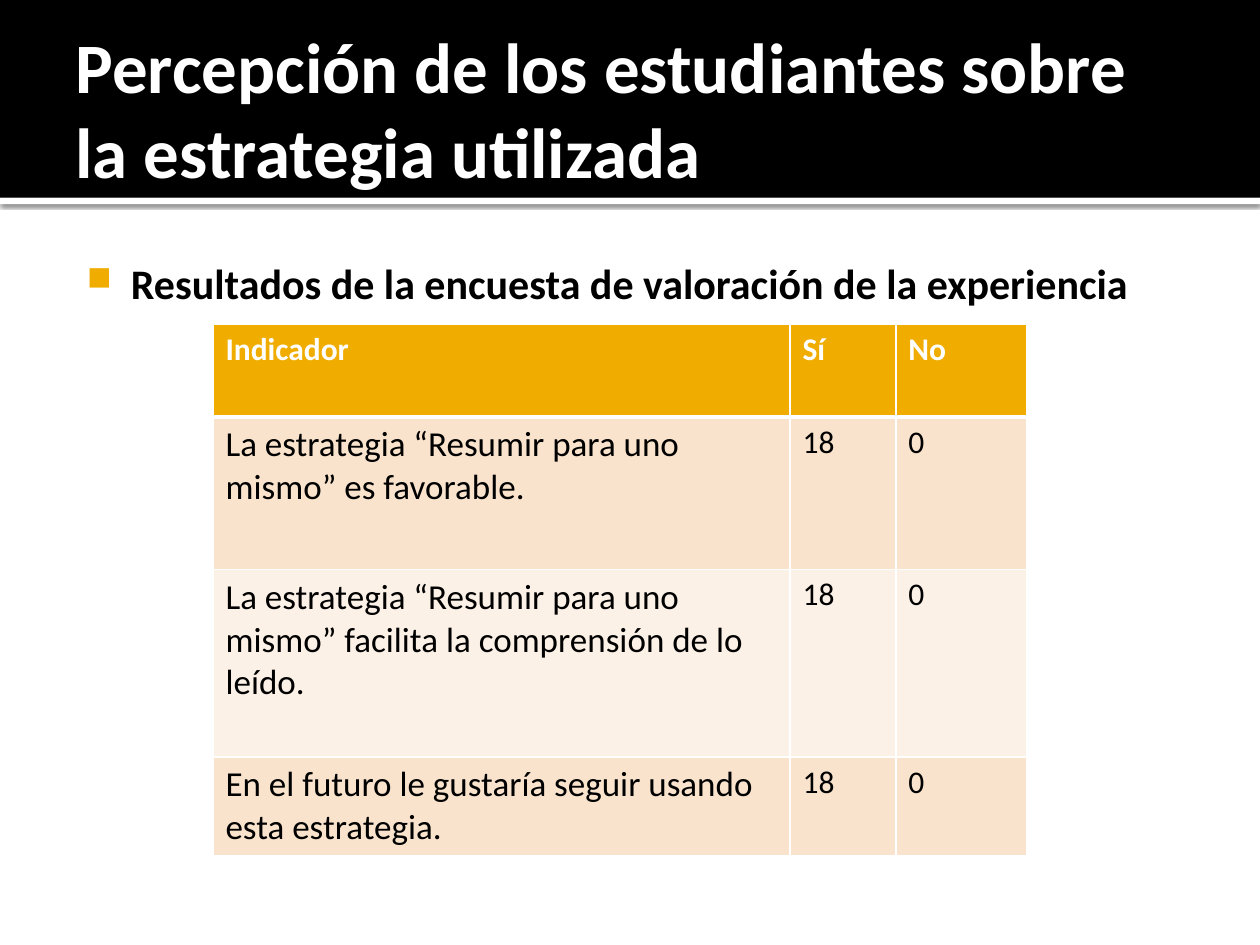
from lxml import etree
from pptx import Presentation, util as u
from pptx.dml.color import RGBColor
from pptx.enum import shapes, text
from pptx.oxml import parse_xml
from pptx.oxml.ns import nsdecls, qn

# Content
TITLE = "Percepción de los estudiantes sobre la estrategia utilizada"
LEAD = "Resultados de la encuesta de valoración de la experiencia"
ROWS = [
    ("Indicador", "Sí", "No"),
    ("La estrategia “Resumir para uno mismo” es favorable.", "18", "0"),
    ("La estrategia “Resumir para uno mismo” facilita la comprensión de lo leído.", "18", "0"),
    ("En el futuro le gustaría seguir usando esta estrategia.", "18", "0"),
]
WIDTHS = (4.58, 0.84, 1.04)
HEIGHTS = (0.74, 1.21, 1.49, 0.77)

FONT = "Calibri"
WHITE = RGBColor(0xFF, 0xFF, 0xFF)
BLACK = RGBColor(0, 0, 0)
GOLD = RGBColor(0xF0, 0xAD, 0x00)
PEACH = RGBColor(0xF9, 0xE3, 0xCC)
CREAM = RGBColor(0xFC, 0xF1, 0xE7)


def add_run(para, words, size, color, bold):
    para.alignment = text.PP_ALIGN.LEFT
    run = para.add_run()
    run.text = words
    font = run.font
    font.name, font.size, font.bold = FONT, u.Pt(size), bold
    font.color.rgb = color


def set_frame(frame, anchor, *insets):
    frame.word_wrap = True
    frame.auto_size = text.MSO_AUTO_SIZE.NONE
    frame.vertical_anchor = anchor
    (frame.margin_left, frame.margin_top,
     frame.margin_right, frame.margin_bottom) = map(u.Inches, insets)


def add_band(top, height, color):
    band = slide.shapes.add_shape(
        shapes.MSO_SHAPE.RECTANGLE, 0, u.Inches(top), deck.slide_width, u.Inches(height))
    band.shadow.inherit = False
    band.fill.solid()
    band.fill.fore_color.rgb = color
    band.line.fill.background()
    return band


def set_edges(cell, top, bottom):
    props = cell._tc.get_or_add_tcPr()
    for spot, (side, width) in enumerate(zip("LRTB", (1, 1, top, bottom))):
        props.insert(spot, parse_xml(
            f'<a:ln{side} {nsdecls("a")} w="{u.Pt(width)}"><a:solidFill>'
            f'<a:srgbClr val="{WHITE}"/></a:solidFill></a:ln{side}>'))


deck = Presentation()
deck.slide_width, deck.slide_height = u.Inches(10), u.Inches(7.5)
slide = deck.slides.add_slide(deck.slide_layouts[5])

# Header bands, the white one with a soft shadow below
strip = add_band(1.57, 0.05, WHITE)
glow = strip.element.spPr.find(qn("a:effectLst"))
glow.append(parse_xml(
    f'<a:outerShdw {nsdecls("a")} blurRad="{u.Pt(2.5)}" dist="{u.Pt(0.8)}" dir="5400000" '
    'algn="t" rotWithShape="0"><a:srgbClr val="000000"><a:alpha val="60000"/>'
    '</a:srgbClr></a:outerShdw>'))
add_band(0, 1.57, BLACK)

# Title, brought in front of the bands
title = slide.shapes.title
title.left, title.top, title.width, title.height = map(u.Inches, (0.5, 0.17, 9, 1.37))
set_frame(title.text_frame, text.MSO_ANCHOR.MIDDLE, 0.1, 0.05, 0.05, 0.05)
add_run(title.text_frame.paragraphs[0], TITLE, 40.5, WHITE, True)
title.element.getparent().append(title.element)

# Bulleted lead line
body = slide.shapes.add_textbox(*map(u.Inches, (0.5, 1.94, 9, 5.06)))
set_frame(body.text_frame, text.MSO_ANCHOR.TOP, 0.06, 0.1, 0.1, 0.05)
para = body.text_frame.paragraphs[0]
add_run(para, LEAD, 24, BLACK, True)
props = para._p.get_or_add_pPr()
props.set("marL", str(u.Inches(0.48)))
props.set("indent", str(u.Inches(-0.35)))
tint = etree.SubElement(props, qn("a:buClr"))
etree.SubElement(tint, qn("a:srgbClr"), val=str(GOLD))
etree.SubElement(props, qn("a:buSzPct"), val="80000")
etree.SubElement(props, qn("a:buChar"), char="■")

# Survey table
table = slide.shapes.add_table(
    len(ROWS), len(WIDTHS), u.Inches(1.69), u.Inches(2.57),
    u.Inches(sum(WIDTHS)), u.Inches(sum(HEIGHTS))).table
for col, width in zip(table.columns, WIDTHS):
    col.width = u.Inches(width)
for r, (row, height) in enumerate(zip(ROWS, HEIGHTS)):
    table.rows[r].height = u.Inches(height)
    head = r == 0
    fill = GOLD if head else PEACH if r % 2 else CREAM
    for c, words in enumerate(row):
        cell = table.cell(r, c)
        cell.fill.solid()
        cell.fill.fore_color.rgb = fill
        set_edges(cell, 3 if r == 1 else 1, 3 if head else 1)
        size = 20 if c == 0 and not head else 18
        add_run(cell.text_frame.paragraphs[0], words, size, WHITE if head else BLACK, head)

deck.save("out.pptx")
